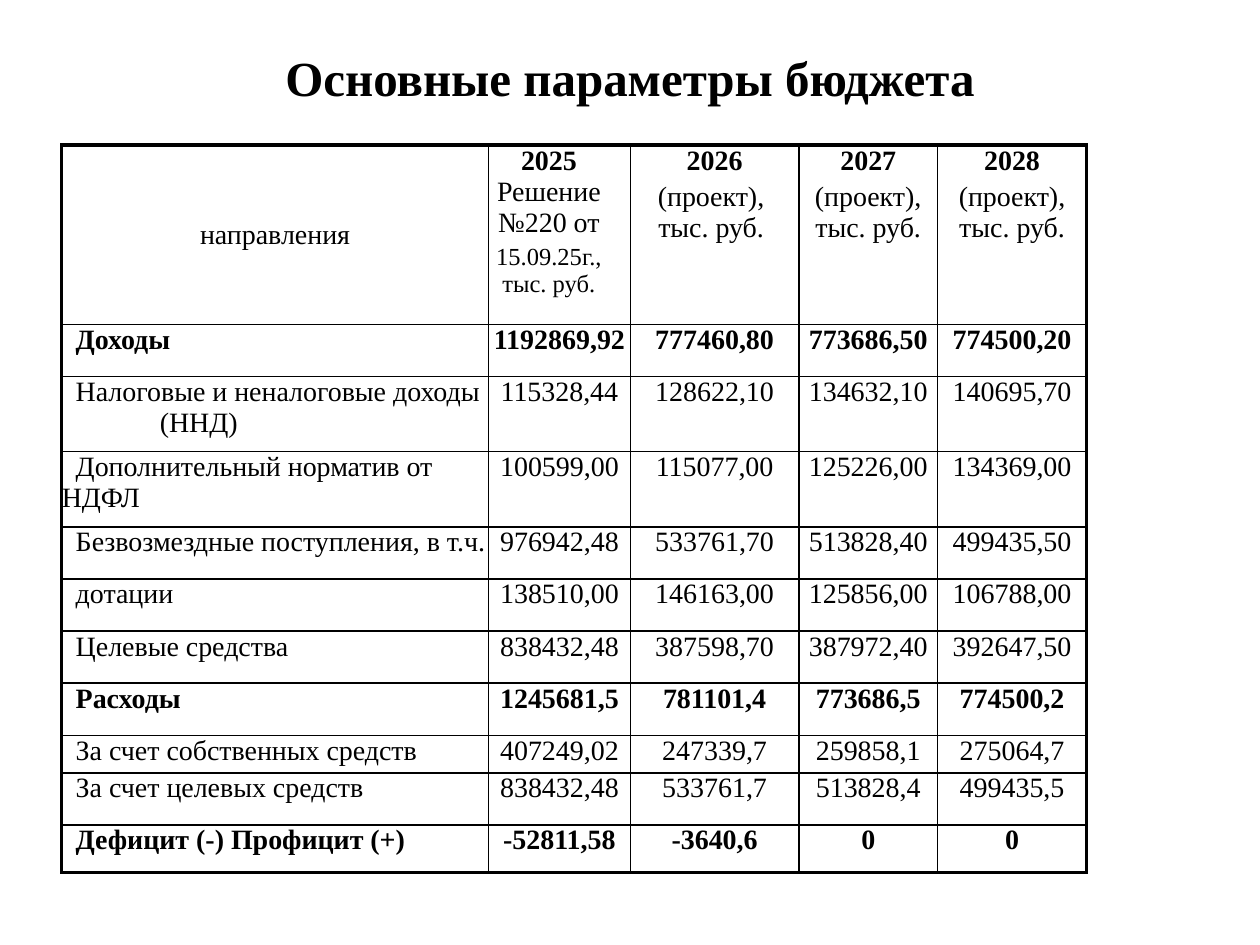
from lxml.etree import SubElement
from pptx import Presentation
from pptx.dml.color import RGBColor as Rgb
from pptx.enum.text import MSO_ANCHOR as Anchor, PP_ALIGN as Align
from pptx.oxml.ns import qn
from pptx.util import Pt

COLORS = {"ink": "000000", "page": "FFFFFF"}
FONT = "Times New Roman"
THIN, THICK = 1, 2.25
INDENT, TAIL_INDENT = 8, 56

COLUMN_WIDTHS = [243.8, 81.2, 96.2, 79.4, 85]
ROW_HEIGHTS = [102.4, 29.8, 43, 43, 29.8, 29.8, 29.8, 29.8, 21.4, 29.8, 27.2]

# Header cells: lines of (text, format, space before, right margin)
BOLD, PLAIN, SMALL = {"bold": True}, {}, {"size": Pt(14)}
HEADER = [
    [("направления", PLAIN, 0, 0)],
    [("2025", BOLD, 0, 12), ("Решение №220 от", PLAIN, 0, 0),
     ("15.09.25г.,", SMALL, 3, 12), ("тыс. руб.", SMALL, 0, 0)],
    [("2026", BOLD, 0, 0), ("(проект),", PLAIN, 3, 4), ("тыс. руб.", PLAIN, 0, 0)],
] + [[(year, BOLD, 0, 0), ("(проект), тыс. руб.", PLAIN, 3, 0)]
     for year in ("2027", "2028")]

# Body rows: label, four values
ROWS = [
    ("Доходы", "1192869,92", "777460,80", "773686,50", "774500,20"),
    ("Налоговые и неналоговые доходы", "115328,44", "128622,10", "134632,10", "140695,70"),
    ("Дополнительный норматив от НДФЛ", "100599,00", "115077,00", "125226,00", "134369,00"),
    ("Безвозмездные поступления, в т.ч.", "976942,48", "533761,70", "513828,40", "499435,50"),
    ("дотации", "138510,00", "146163,00", "125856,00", "106788,00"),
    ("Целевые средства", "838432,48", "387598,70", "387972,40", "392647,50"),
    ("Расходы", "1245681,5", "781101,4", "773686,5", "774500,2"),
    ("За счет собственных средств", "407249,02", "247339,7", "259858,1", "275064,7"),
    ("За счет целевых средств", "838432,48", "533761,7", "513828,4", "499435,5"),
    ("Дефицит (-) Профицит (+)", "-52811,58", "-3640,6", "0", "0"),
]
TOTALS = {"Доходы", "Расходы", "Дефицит (-) Профицит (+)"}
LABEL_TAILS = {"Налоговые и неналоговые доходы": "(ННД)"}


class BudgetPage:
    def __init__(self, deck):
        self.page = deck.slides.add_slide(deck.slide_layouts[5])
        self.page.background.fill.solid()
        self.page.background.fill.fore_color.rgb = Rgb.from_string(COLORS["page"])
        self.text_format = {"name": FONT, "size": Pt(16), "bold": False}

    def span(self, para, text, **changes):
        span = para.add_run()
        span.text = text
        for name, value in {**self.text_format, **changes}.items():
            setattr(span.font, name, value)
        span.font.color.rgb = Rgb.from_string(COLORS["ink"])

    def title(self, text, left, top, width, height):
        box = self.page.shapes.title
        frame = {"left": left, "top": top, "width": width, "height": height}
        for name, value in frame.items():
            setattr(box, name, Pt(value))
        box.text_frame.vertical_anchor = Anchor.MIDDLE
        para = box.text_frame.paragraphs[0]
        para.alignment = Align.CENTER
        self.span(para, text, size=Pt(28), bold=True)

    def borders(self, cell, widths):
        properties = cell._tc.get_or_add_tcPr()
        for side, width in widths.items():
            line = SubElement(properties, qn(f"a:ln{side}"), w=str(Pt(width)))
            fill = SubElement(line, qn("a:solidFill"))
            SubElement(fill, qn("a:srgbClr"), val=COLORS["ink"])

    def cell(self, cell, lines, align=Align.CENTER, indents=(), anchor=Anchor.TOP):
        for side in ("left", "top", "right", "bottom"):
            setattr(cell, f"margin_{side}", 0)
        cell.vertical_anchor = anchor
        cell.fill.background()
        frame = cell.text_frame
        for index, (text, changes, gap, margin) in enumerate(lines):
            para = frame.add_paragraph() if index else frame.paragraphs[0]
            para.alignment = align
            para.space_before = Pt(gap)
            properties = para._p.get_or_add_pPr()
            if margin:
                properties.set("marR", str(Pt(margin)))
            if indents:
                properties.set("indent", str(Pt(indents[index])))
            self.span(para, text, **changes)

    def table(self, left, top):
        row_count, column_count = len(ROW_HEIGHTS), len(COLUMN_WIDTHS)
        table = self.page.shapes.add_table(
            row_count, column_count, Pt(left), Pt(top),
            Pt(sum(COLUMN_WIDTHS)), Pt(sum(ROW_HEIGHTS))).table
        table.first_row = table.horz_banding = False
        for column, width in zip(table.columns, COLUMN_WIDTHS):
            column.width = Pt(width)
        for row, height in zip(table.rows, ROW_HEIGHTS):
            row.height = Pt(height)

        # Thick frame, thin inner grid
        for r in range(row_count):
            for c in range(column_count):
                outer = {"L": c == 0, "R": c == column_count - 1,
                         "T": r == 0, "B": r == row_count - 1}
                self.borders(table.cell(r, c), {
                    side: THICK if edge else THIN for side, edge in outer.items()})

        # Header
        for c, lines in enumerate(HEADER):
            self.cell(table.cell(0, c), lines,
                      anchor=Anchor.TOP if c else Anchor.MIDDLE)

        # Labels and values
        for r, (label, *values) in enumerate(ROWS, 1):
            style = BOLD if label in TOTALS else PLAIN
            lines = [(label, style, 0, 0)]
            if label in LABEL_TAILS:
                lines.append((LABEL_TAILS[label], style, 0, 0))
            self.cell(table.cell(r, 0), lines, Align.LEFT, (INDENT, TAIL_INDENT))
            for c, value in enumerate(values, 1):
                self.cell(table.cell(r, c), [(value, style, 0, 0)])


def main():
    deck = Presentation()
    deck.slide_width, deck.slide_height = Pt(720), Pt(540)
    page = BudgetPage(deck)
    page.title("Основные параметры бюджета", 36, 22, 648, 44)
    page.table(35.3, 82.9)
    deck.save("out.pptx")


if __name__ == "__main__":
    main()
